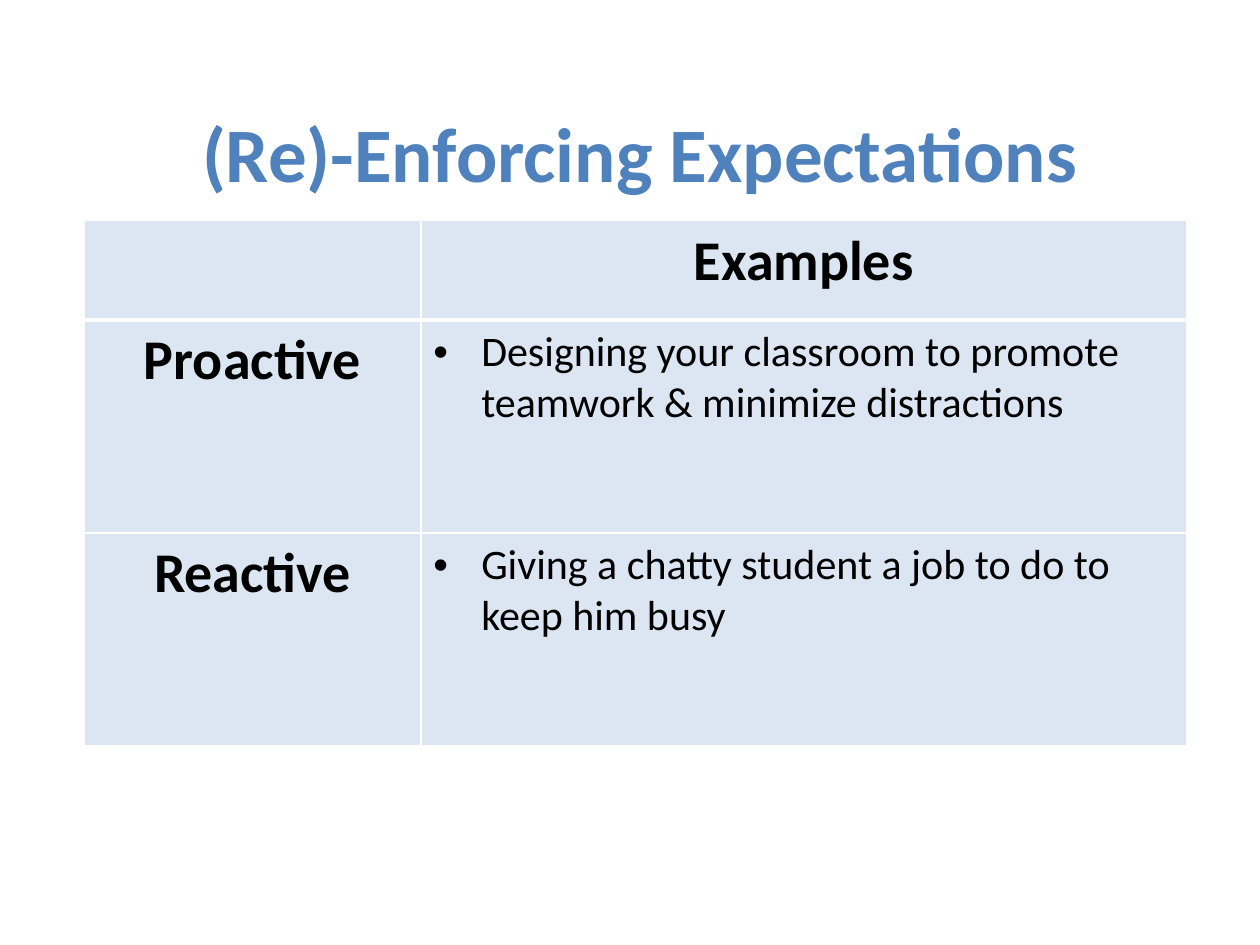
from dataclasses import dataclass
from pptx import Presentation
from pptx.dml.color import RGBColor
from pptx.enum.text import MSO_ANCHOR, PP_ALIGN
from pptx.oxml.xmlchemy import OxmlElement
from pptx.util import Inches, Pt

CENTER, LEFT = PP_ALIGN.CENTER, PP_ALIGN.LEFT
TOP, MIDDLE = MSO_ANCHOR.TOP, MSO_ANCHOR.MIDDLE
TITLE_ONLY = 5


@dataclass(frozen=True)
class Theme:
    font: str = "Calibri"
    blue: str = "4F81BD"
    pale: str = "DCE6F2"
    white: str = "FFFFFF"
    black: str = "000000"
    title: int = 44
    head: int = 32
    body: int = 24
    thin: int = 1
    thick: int = 3


@dataclass(frozen=True)
class Entry:
    label: str
    example: str
    height: float


THEME = Theme()
COLS = (2.67, 6.08)
ENTRIES = (
    Entry("", "Examples", 0.79),
    Entry("Proactive", "Designing your classroom to promote teamwork & minimize distractions", 1.69),
    Entry("Reactive", "Giving a chatty student a job to do to keep him busy", 1.69),
)


def style(para, size: int, color: str, bold: bool, align) -> None:
    para.alignment = align
    for font in [para.font] + [run.font for run in para.runs]:
        font.name = THEME.font
        font.size = Pt(size)
        font.bold = bold
        font.color.rgb = RGBColor.from_string(color)


def add_bullet(para) -> None:
    props = para._p.get_or_add_pPr()
    props.set("marL", str(Inches(0.38)))
    props.set("indent", str(-Inches(0.38)))
    face = OxmlElement("a:buFont")
    face.set("typeface", "Arial")
    mark = OxmlElement("a:buChar")
    mark.set("char", "•")
    props.extend([face, mark])


def add_border(cell, side: str, width: int) -> None:
    line = OxmlElement(f"a:ln{side}")
    line.set("w", str(Pt(width)))
    fill = OxmlElement("a:solidFill")
    color = OxmlElement("a:srgbClr")
    color.set("val", THEME.white)
    fill.append(color)
    line.append(fill)
    cell._tc.get_or_add_tcPr().append(line)


def fill_cell(cell, text: str, row: int, col: int) -> None:
    """Borders come before the fill, as the cell schema demands."""
    heavy = {(0, "B"), (1, "T")}
    for side in "LRTB":
        add_border(cell, side, THEME.thick if (row, side) in heavy else THEME.thin)
    cell.fill.solid()
    cell.fill.fore_color.rgb = RGBColor.from_string(THEME.pale)
    cell.vertical_anchor = TOP
    cell.text_frame.text = text
    para = cell.text_frame.paragraphs[0]
    if row and col:
        add_bullet(para)
        style(para, THEME.body, THEME.black, False, LEFT)
    else:
        style(para, THEME.head, THEME.black, True, CENTER)


def add_title(slide, text: str) -> None:
    title = slide.shapes.title
    title.left, title.top = Inches(0.58), Inches(0.58)
    title.width, title.height = Inches(9), Inches(1.25)
    frame = title.text_frame
    frame.text = text
    frame.vertical_anchor = MIDDLE
    style(frame.paragraphs[0], THEME.title, THEME.blue, True, CENTER)


def add_grid(slide) -> None:
    height = sum(entry.height for entry in ENTRIES)
    table = slide.shapes.add_table(
        len(ENTRIES), len(COLS), Inches(0.67), Inches(1.75),
        Inches(sum(COLS)), Inches(height)).table
    for col, width in enumerate(COLS):
        table.columns[col].width = Inches(width)
    for row, entry in enumerate(ENTRIES):
        table.rows[row].height = Inches(entry.height)
        for col, text in enumerate((entry.label, entry.example)):
            fill_cell(table.cell(row, col), text, row, col)


def main() -> None:
    deck = Presentation()
    deck.slide_width, deck.slide_height = Inches(10), Inches(7.5)
    slide = deck.slides.add_slide(deck.slide_layouts[TITLE_ONLY])
    add_title(slide, "(Re)-Enforcing Expectations")
    add_grid(slide)
    deck.save("out.pptx")


if __name__ == "__main__":
    main()
